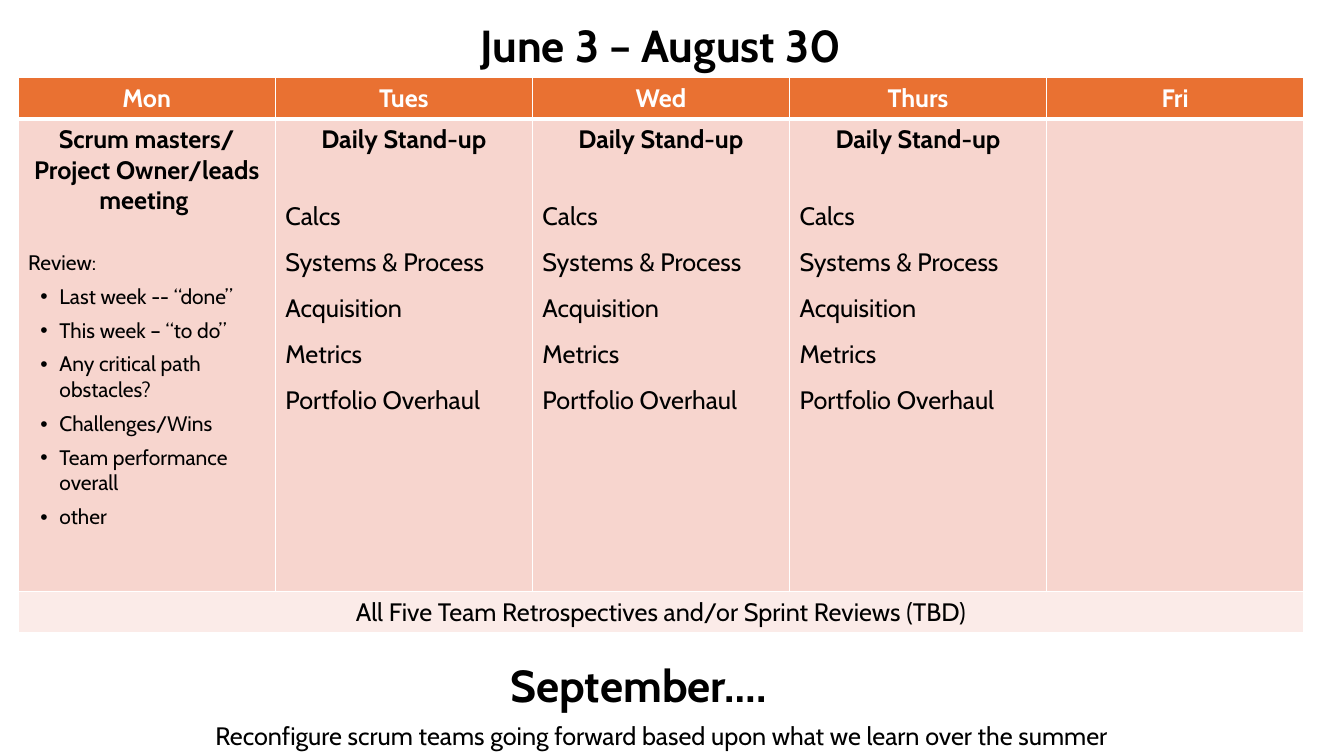
from dataclasses import dataclass

from lxml import etree
from pptx import Presentation
from pptx.dml.color import RGBColor
from pptx.enum.text import MSO_AUTO_SIZE, PP_ALIGN
from pptx.oxml.ns import qn
from pptx.slide import Slide
from pptx.table import Table, _Cell
from pptx.text.text import TextFrame, _Paragraph
from pptx.util import Emu, Pt

EMU_PER_PX = 9144
FONT = "Cabin"
BLACK = RGBColor(0x00, 0x00, 0x00)
WHITE = RGBColor(0xFF, 0xFF, 0xFF)
ORANGE = RGBColor(0xE9, 0x71, 0x32)
PEACH = RGBColor(0xF7, 0xD5, 0xCE)
PALE_PEACH = RGBColor(0xFB, 0xEB, 0xE8)
CENTER = PP_ALIGN.CENTER
LEFT = PP_ALIGN.LEFT
GROW = MSO_AUTO_SIZE.SHAPE_TO_FIT_TEXT

COLUMN_WIDTH = 255
ROW_HEIGHTS = (41, 469, 41)


@dataclass(frozen=True)
class Line:
    text: str
    size: int = 18
    bold: bool = False
    color: RGBColor = BLACK
    align: PP_ALIGN = CENTER
    before: int = 0
    spacing: float = 1.0
    bullet: bool = False


@dataclass(frozen=True)
class Caption:
    left: int
    top: int
    width: int
    height: int
    line: Line


DAYS = ("Mon", "Tues", "Wed", "Thurs", "Fri")
REVIEW_POINTS = (
    "Last week -- “done”",
    "This week – “to do”",
    "Any critical path obstacles?",
    "Challenges/Wins",
    "Team performance overall",
    "other",
)
TEAMS = ("Calcs", "Systems & Process", "Acquisition", "Metrics", "Portfolio Overhaul")

MONDAY = [
    Line("Scrum masters/ Project Owner/leads meeting ", bold=True),
    Line("Review:", size=15, align=LEFT, before=24),
    *(Line(point, size=15, align=LEFT, before=6, bullet=True) for point in REVIEW_POINTS),
]
STAND_UP = [
    Line("Daily Stand-up", bold=True),
    *(
        Line(team, align=LEFT, before=0 if index else 22, spacing=1.5)
        for index, team in enumerate(TEAMS)
    ),
]
PLANS = (MONDAY, STAND_UP, STAND_UP, STAND_UP, [])
RETROSPECTIVES = Line("All Five Team Retrospectives and/or Sprint Reviews (TBD)")

CAPTIONS = (
    Caption(22, 13, 1267, 64, Line("June 3 – August 30", size=32, bold=True)),
    Caption(0, 648, 1267, 64, Line("September….", size=32, bold=True)),
    Caption(
        109, 710, 1094, 40,
        Line("Reconfigure scrum teams going forward based upon what we learn over the summer"),
    ),
)


def px(length: int) -> Emu:
    return Emu(length * EMU_PER_PX)


def add_bullet(para: _Paragraph) -> None:
    properties = para._p.get_or_add_pPr()
    properties.set("marL", str(px(31)))
    properties.set("indent", str(px(-19)))
    etree.SubElement(properties, qn("a:buFont")).set("typeface", "Arial")
    etree.SubElement(properties, qn("a:buChar")).set("char", "•")


def write_lines(frame: TextFrame, lines: list[Line]) -> None:
    for index, line in enumerate(lines):
        para = frame.add_paragraph() if index else frame.paragraphs[0]
        para.text = line.text
        para.alignment = line.align
        para.space_before = Pt(line.before)
        para.line_spacing = line.spacing
        if line.bullet:
            add_bullet(para)
        font = para.runs[0].font
        font.name = FONT
        font.size = Pt(line.size)
        font.bold = line.bold
        font.color.rgb = line.color


def style_cell(cell: _Cell, fill: RGBColor, top: int = 1, bottom: int = 1) -> None:
    properties = cell._tc.get_or_add_tcPr()
    for side, width in (("L", 1), ("R", 1), ("T", top), ("B", bottom)):
        border = etree.SubElement(properties, qn(f"a:ln{side}"), w=str(Pt(width)))
        paint = etree.SubElement(border, qn("a:solidFill"))
        etree.SubElement(paint, qn("a:srgbClr")).set("val", str(WHITE))
    cell.fill.solid()
    cell.fill.fore_color.rgb = fill


def add_schedule(slide: Slide) -> Table:
    table = slide.shapes.add_table(
        len(ROW_HEIGHTS), len(DAYS),
        px(18), px(77), px(COLUMN_WIDTH * len(DAYS)), px(sum(ROW_HEIGHTS)),
    ).table
    table.first_row = False
    table.horz_banding = False
    for row, height in zip(table.rows, ROW_HEIGHTS):
        row.height = px(height)
    for index, (day, plan) in enumerate(zip(DAYS, PLANS)):
        table.columns[index].width = px(COLUMN_WIDTH)
        header, body, footer = (table.cell(row, index) for row in range(len(ROW_HEIGHTS)))
        style_cell(header, ORANGE, bottom=3)
        style_cell(body, PEACH, top=3)
        style_cell(footer, PALE_PEACH)
        write_lines(header.text_frame, [Line(day, bold=True, color=WHITE)])
        write_lines(body.text_frame, plan)
    last_row = len(ROW_HEIGHTS) - 1
    retrospectives = table.cell(last_row, 0)
    retrospectives.merge(table.cell(last_row, len(DAYS) - 1))
    write_lines(retrospectives.text_frame, [RETROSPECTIVES])
    return table


def add_caption(slide: Slide, caption: Caption) -> None:
    box = slide.shapes.add_textbox(
        px(caption.left), px(caption.top), px(caption.width), px(caption.height)
    )
    box.text_frame.word_wrap = True
    box.text_frame.auto_size = GROW
    write_lines(box.text_frame, [caption.line])


def main() -> None:
    deck = Presentation()
    deck.slide_width = px(1333)
    deck.slide_height = px(750)
    page = deck.slides.add_slide(deck.slide_layouts[6])
    add_schedule(page)
    for caption in CAPTIONS:
        add_caption(page, caption)
    deck.save("out.pptx")


if __name__ == "__main__":
    main()
